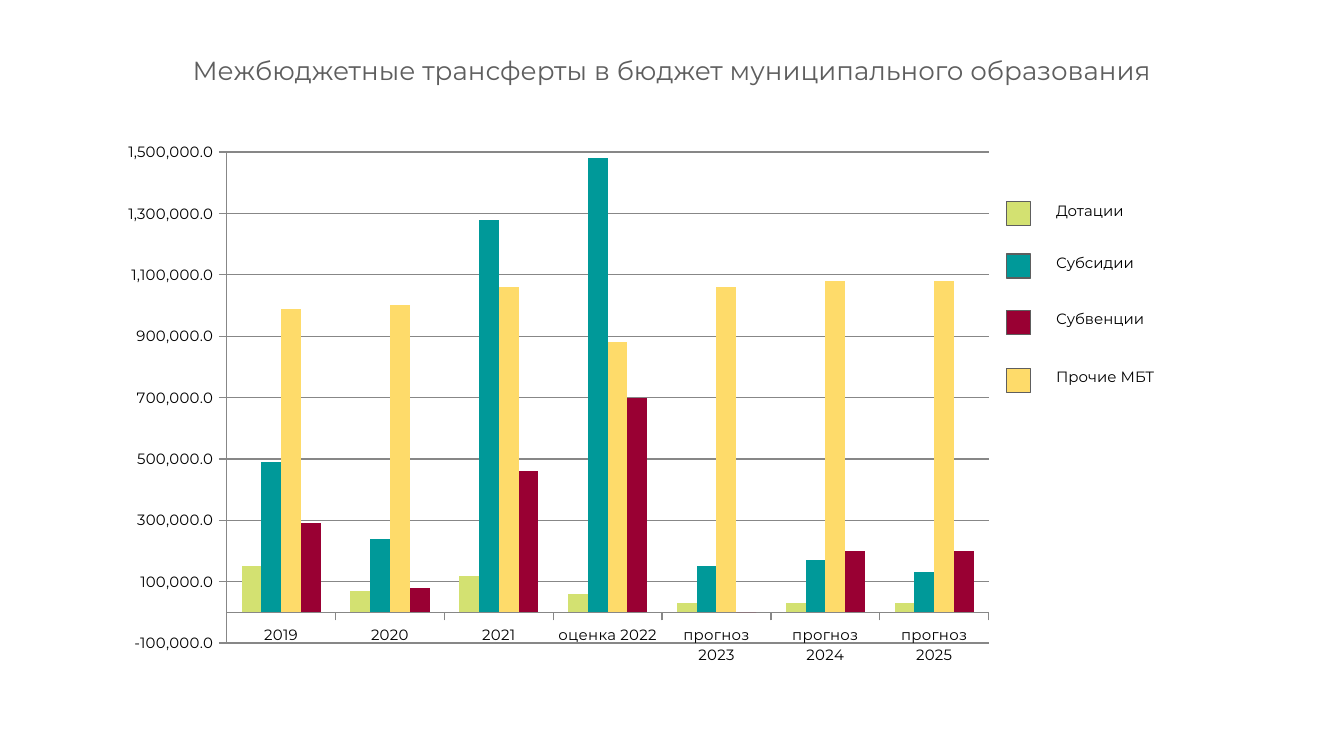
from dataclasses import dataclass

from lxml import etree
from pptx import Presentation
from pptx.chart.axis import CategoryAxis, ValueAxis
from pptx.chart.chart import Chart
from pptx.chart.data import CategoryChartData
from pptx.dml.color import RGBColor
from pptx.enum.chart import XL_CHART_TYPE, XL_TICK_MARK
from pptx.enum.shapes import MSO_SHAPE
from pptx.enum.text import PP_ALIGN
from pptx.oxml.ns import qn
from pptx.slide import Slide
from pptx.util import Inches, Pt

CLUSTERED = XL_CHART_TYPE.COLUMN_CLUSTERED
OUTSIDE, NO_TICK = XL_TICK_MARK.OUTSIDE, XL_TICK_MARK.NONE
RECTANGLE = MSO_SHAPE.RECTANGLE
LEFT, CENTER = PP_ALIGN.LEFT, PP_ALIGN.CENTER

SLIDE_WIDTH = 10
SLIDE_HEIGHT = SLIDE_WIDTH * 9 / 16
FONT = "Montserrat"
BLACK, GREY, AXIS_GREY = "000000", "5E5E5E", "878787"
LIME, TEAL, YELLOW, CRIMSON = "D3E171", "009999", "FEDB6A", "990033"
SWATCH_LEFT, SWATCH_SIZE = 7.49, 0.18
LABEL_LEFT, LABEL_RISE = 7.76, 0.07
PLOT_SHARES = {"x": 0.13, "y": 0.04, "w": 0.85, "h": 0.9}
YEARS = ("2019", "2020", "2021", "оценка 2022",
         "прогноз 2023", "прогноз 2024", "прогноз 2025")


@dataclass(frozen=True)
class Transfer:
    """A kind of transfer with its yearly amounts and legend position."""

    name: str
    color: str
    legend_top: float
    amounts: tuple[int, ...]


TRANSFERS = (
    Transfer("Дотации", LIME, 1.5,
             (150000, 70000, 120000, 60000, 30000, 30000, 30000)),
    Transfer("Субсидии", TEAL, 1.89,
             (490000, 240000, 1280000, 1480000, 150000, 170000, 130000)),
    Transfer("Прочие МБТ", YELLOW, 2.74,
             (990000, 1000000, 1060000, 880000, 1060000, 1080000, 1080000)),
    Transfer("Субвенции", CRIMSON, 2.31,
             (290000, 80000, 460000, 700000, 0, 200000, 200000)),
)


def rgb(color: str) -> RGBColor:
    """Turn a hex string into a colour."""
    return RGBColor.from_string(color)


def add_text(slide: Slide, text: str, left: float, top: float, width: float,
             height: float, *, size: float = 8, color: str = BLACK,
             align: PP_ALIGN = LEFT, spacing: float = 1.0) -> None:
    """Add a wrapped one-paragraph text box."""
    box = slide.shapes.add_textbox(*map(Inches, (left, top, width, height)))
    frame = box.text_frame
    frame.word_wrap = True
    frame.margin_left = frame.margin_right = Inches(0.1)
    frame.margin_top = frame.margin_bottom = Inches(0.1)
    paragraph = frame.paragraphs[0]
    paragraph.alignment = align
    paragraph.line_spacing = spacing
    run = paragraph.add_run()
    run.text = text
    run.font.name = FONT
    run.font.size = Pt(size)
    run.font.color.rgb = rgb(color)


def add_legend_entry(slide: Slide, transfer: Transfer) -> None:
    """Add a colour swatch and its label."""
    swatch = slide.shapes.add_shape(
        RECTANGLE, Inches(SWATCH_LEFT), Inches(transfer.legend_top),
        Inches(SWATCH_SIZE), Inches(SWATCH_SIZE))
    swatch.shadow.inherit = False
    swatch.fill.solid()
    swatch.fill.fore_color.rgb = rgb(transfer.color)
    swatch.line.color.rgb = rgb(GREY)
    swatch.line.width = Pt(0.75)
    add_text(slide, transfer.name, LABEL_LEFT,
             transfer.legend_top - LABEL_RISE, 1.36, 0.34)


def style_axis(axis: CategoryAxis | ValueAxis) -> None:
    """Give an axis its line and outward ticks."""
    axis.major_tick_mark = OUTSIDE
    axis.minor_tick_mark = NO_TICK
    axis.format.line.color.rgb = rgb(AXIS_GREY)
    axis.format.line.width = Pt(0.75)


def place_plot(chart: Chart, shares: dict[str, float]) -> None:
    """Fix the inner plot area as shares of the chart."""
    plot_area = chart.plots[0]._element.getparent()
    for old_layout in plot_area.findall(qn("c:layout")):
        plot_area.remove(old_layout)
    layout = etree.Element(qn("c:layout"))
    manual = etree.SubElement(layout, qn("c:manualLayout"))
    settings = {"layoutTarget": "inner", "xMode": "edge", "yMode": "edge", **shares}
    for tag, value in settings.items():
        etree.SubElement(manual, qn(f"c:{tag}")).set("val", str(value))
    plot_area.insert(0, layout)


def add_transfer_chart(slide: Slide) -> None:
    """Add the clustered columns of transfers by year."""
    data = CategoryChartData(number_format="#,##0.0")
    data.categories = YEARS
    for number, transfer in enumerate(TRANSFERS, start=1):
        data.add_series(f"Series {number}", transfer.amounts)
    chart = slide.shapes.add_chart(
        CLUSTERED, *map(Inches, (0.82, 0.97, 6.67, 4.06)), data).chart
    chart.has_legend = chart.has_title = False
    chart.font.name = FONT
    chart.font.size = Pt(8)
    chart.font.color.rgb = rgb(BLACK)
    plot = chart.plots[0]
    plot.gap_width, plot.overlap = 150, 0
    plot.vary_by_categories = False
    for series, transfer in zip(plot.series, TRANSFERS):
        series.invert_if_negative = False
        series.format.fill.solid()
        series.format.fill.fore_color.rgb = rgb(transfer.color)
    amounts = chart.value_axis
    amounts.minimum_scale, amounts.maximum_scale = -100000, 1500000
    amounts.major_unit = 200000
    amounts.tick_labels.number_format = "#,##0.0"
    amounts.tick_labels.number_format_is_linked = False
    amounts.has_major_gridlines = True
    amounts.major_gridlines.format.line.color.rgb = rgb(AXIS_GREY)
    amounts.major_gridlines.format.line.width = Pt(0.75)
    for axis in (chart.category_axis, amounts):
        style_axis(axis)
    place_plot(chart, PLOT_SHARES)


def main() -> None:
    """Build and save the slide."""
    presentation = Presentation()
    presentation.slide_width = Inches(SLIDE_WIDTH)
    presentation.slide_height = Inches(SLIDE_HEIGHT)
    slide = presentation.slides.add_slide(presentation.slide_layouts[6])
    add_text(slide, "Межбюджетные трансферты в бюджет муниципального образования",
             0, 0.27, SLIDE_WIDTH, 0.47, size=14, color=GREY, align=CENTER,
             spacing=1.15)
    for transfer in sorted(TRANSFERS, key=lambda entry: entry.legend_top):
        add_legend_entry(slide, transfer)
    add_transfer_chart(slide)
    presentation.save("out.pptx")


if __name__ == "__main__":
    main()
